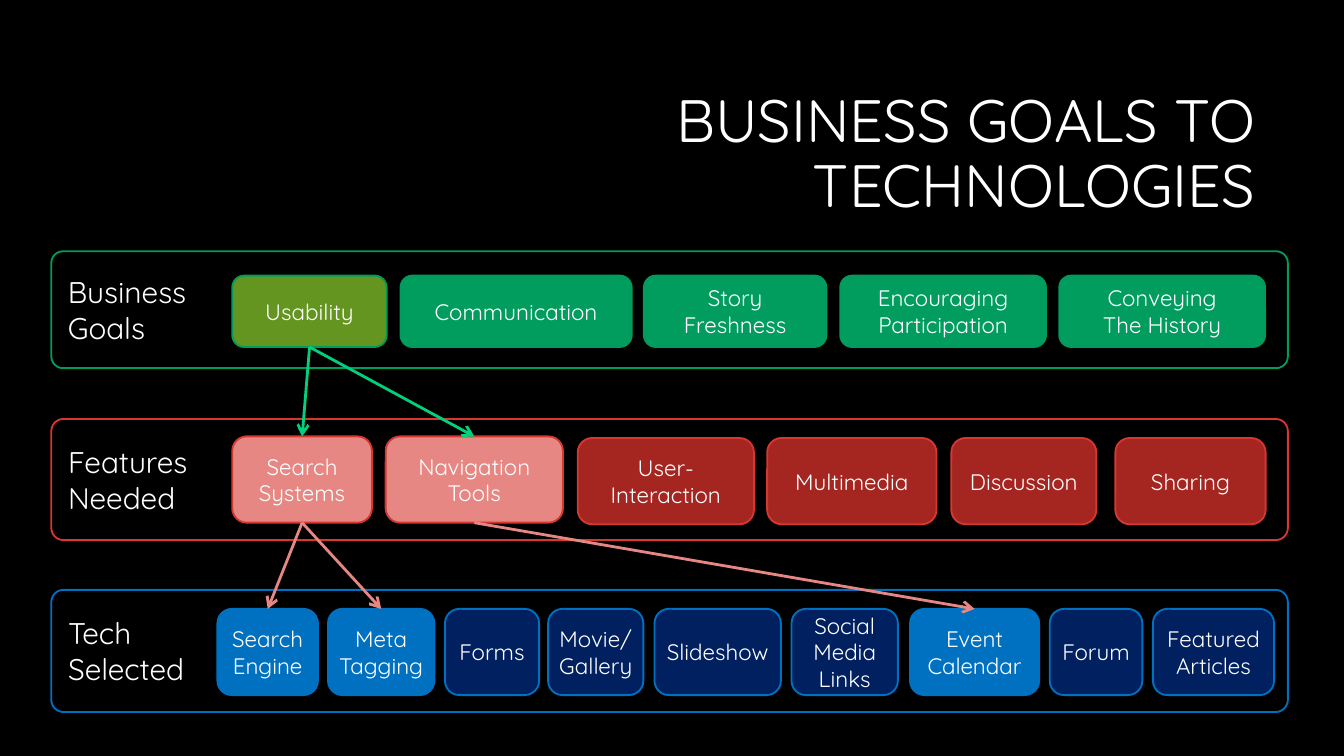
from dataclasses import dataclass

from lxml.etree import SubElement
from pptx import Presentation
from pptx.dml.color import RGBColor
from pptx.enum.shapes import MSO_CONNECTOR as Connector, MSO_SHAPE as Shape
from pptx.enum.text import MSO_ANCHOR as Anchor, MSO_AUTO_SIZE as AutoSize, PP_ALIGN as Align
from pptx.oxml.ns import qn
from pptx.util import Cm, Pt

FONT = "Quicksand"
WHITE = "FFFFFF"
LANE_LEFT, LANE_WIDTH = 0.97, 23.37
BOTTOM, TOP = 2, 0


@dataclass(frozen=True)
class Item:
    text: str
    left: float
    width: float
    selected: bool = False


@dataclass(frozen=True)
class Lane:
    heading: str
    top: float
    height: float
    outline: str
    fill: str
    selected_fill: str
    item_top: float
    selected_top: float
    item_height: float
    side_inset: float
    items: tuple[Item, ...]


@dataclass(frozen=True)
class Link:
    source: str
    target: str
    color: str


LANES = (
    Lane("Business\nGoals", 4.75, 2.21, "019B5C", "019D5E", "639520",
         5.21, 5.21, 1.35, 0.25, (
             Item("Usability", 4.39, 2.92, True),
             Item("Communication", 7.57, 4.37),
             Item("Story\nFreshness", 12.17, 3.45),
             Item("Encouraging Participation", 15.88, 3.89),
             Item("Conveying\nThe History", 20.02, 3.89),
         )),
    Lane("Features\nNeeded", 7.92, 2.29, "D63731", "A52621", "E68783",
         8.28, 8.25, 1.63, 0.25, (
             Item("Search\nSystems", 4.39, 2.64, True),
             Item("Navigation\nTools", 7.29, 3.35, True),
             Item("User-Interaction", 10.92, 3.33),
             Item("Multimedia", 14.5, 3.2),
             Item("Discussion", 17.98, 2.74),
             Item("Sharing", 21.08, 2.84),
         )),
    Lane("Tech\nSelected", 11.15, 2.31, "0070C0", "002060", "0070C0",
         11.51, 11.51, 1.63, 0, (
             Item("Search Engine", 4.11, 1.9, True),
             Item("Meta\nTagging", 6.2, 2.01, True),
             Item("Forms", 8.41, 1.78),
             Item("Movie/\nGallery", 10.36, 1.8),
             Item("Slideshow", 12.37, 2.39),
             Item("Social Media\nLinks", 14.96, 2.01),
             Item("Event\nCalendar", 17.2, 2.44, True),
             Item("Forum", 19.84, 1.75),
             Item("Featured\nArticles", 21.79, 2.29),
         )),
)

LINKS = (
    Link("Usability", "Search\nSystems", "01D17D"),
    Link("Usability", "Navigation\nTools", "01D17D"),
    Link("Search\nSystems", "Search Engine", "E68783"),
    Link("Search\nSystems", "Meta\nTagging", "E68783"),
    Link("Navigation\nTools", "Event\nCalendar", "E68783"),
)


def rgb(color: str) -> RGBColor:
    return RGBColor.from_string(color)


def write_text(frame, text: str, size: float, align: Align, side_inset: float = 0.25) -> None:
    frame.word_wrap = True
    frame.auto_size = AutoSize.NONE
    frame.vertical_anchor = Anchor.MIDDLE
    frame.margin_left = frame.margin_right = Cm(side_inset)
    frame.margin_top = frame.margin_bottom = Cm(0.13)
    for index, line in enumerate(text.split("\n")):
        paragraph = frame.add_paragraph() if index else frame.paragraphs[0]
        paragraph.alignment = align
        run = paragraph.add_run()
        run.text = line
        run.font.name = FONT
        run.font.size = Pt(size)
        run.font.color.rgb = rgb(WHITE)


def add_rounded(slide, left: float, top: float, width: float, height: float, outline: str):
    rounded = slide.shapes.add_shape(
        Shape.ROUNDED_RECTANGLE, Cm(left), Cm(top), Cm(width), Cm(height))
    rounded.shadow.inherit = False
    rounded.fill.background()
    rounded.line.color.rgb = rgb(outline)
    rounded.line.width = Pt(1)
    return rounded


def draw_lane(slide, lane: Lane) -> dict:
    band = add_rounded(slide, LANE_LEFT, lane.top, LANE_WIDTH, lane.height, lane.outline)
    band.adjustments[0] = 0.1
    write_text(band.text_frame, lane.heading, 16, Align.LEFT)
    boxes = {}
    for item in lane.items:
        top = lane.selected_top if item.selected else lane.item_top
        box = add_rounded(slide, item.left, top, item.width, lane.item_height, lane.outline)
        box.fill.solid()
        box.fill.fore_color.rgb = rgb(lane.selected_fill if item.selected else lane.fill)
        write_text(box.text_frame, item.text, 12, Align.CENTER, lane.side_inset)
        boxes[item.text] = box
    return boxes


def draw_link(slide, link: Link, boxes: dict) -> None:
    arrow = slide.shapes.add_connector(Connector.STRAIGHT, 0, 0, 0, 0)
    arrow.begin_connect(boxes[link.source], BOTTOM)
    arrow.end_connect(boxes[link.target], TOP)
    arrow.line.color.rgb = rgb(link.color)
    arrow.line.width = Pt(1.5)
    SubElement(arrow.line._get_or_add_ln(), qn("a:tailEnd"), type="arrow")
    SubElement(arrow._element.spPr, qn("a:effectLst"))


def draw_title(slide, text: str) -> None:
    title = slide.shapes.title
    title.left, title.top = Cm(6.05), Cm(1.6)
    title.width, title.height = Cm(17.93), Cm(2.69)
    write_text(title.text_frame, text, 32, Align.RIGHT)
    title.text_frame.paragraphs[0].line_spacing = 0.9


def main() -> None:
    deck = Presentation()
    deck.slide_width, deck.slide_height = Cm(25.4), Cm(14.29)
    slide = deck.slides.add_slide(deck.slide_layouts[5])
    slide.background.fill.solid()
    slide.background.fill.fore_color.rgb = rgb("000000")
    draw_title(slide, "BUSINESS GOALS TO TECHNOLOGIES")
    boxes = {}
    for lane in LANES:
        boxes.update(draw_lane(slide, lane))
    for link in LINKS:
        draw_link(slide, link, boxes)
    deck.save("out.pptx")


if __name__ == "__main__":
    main()
